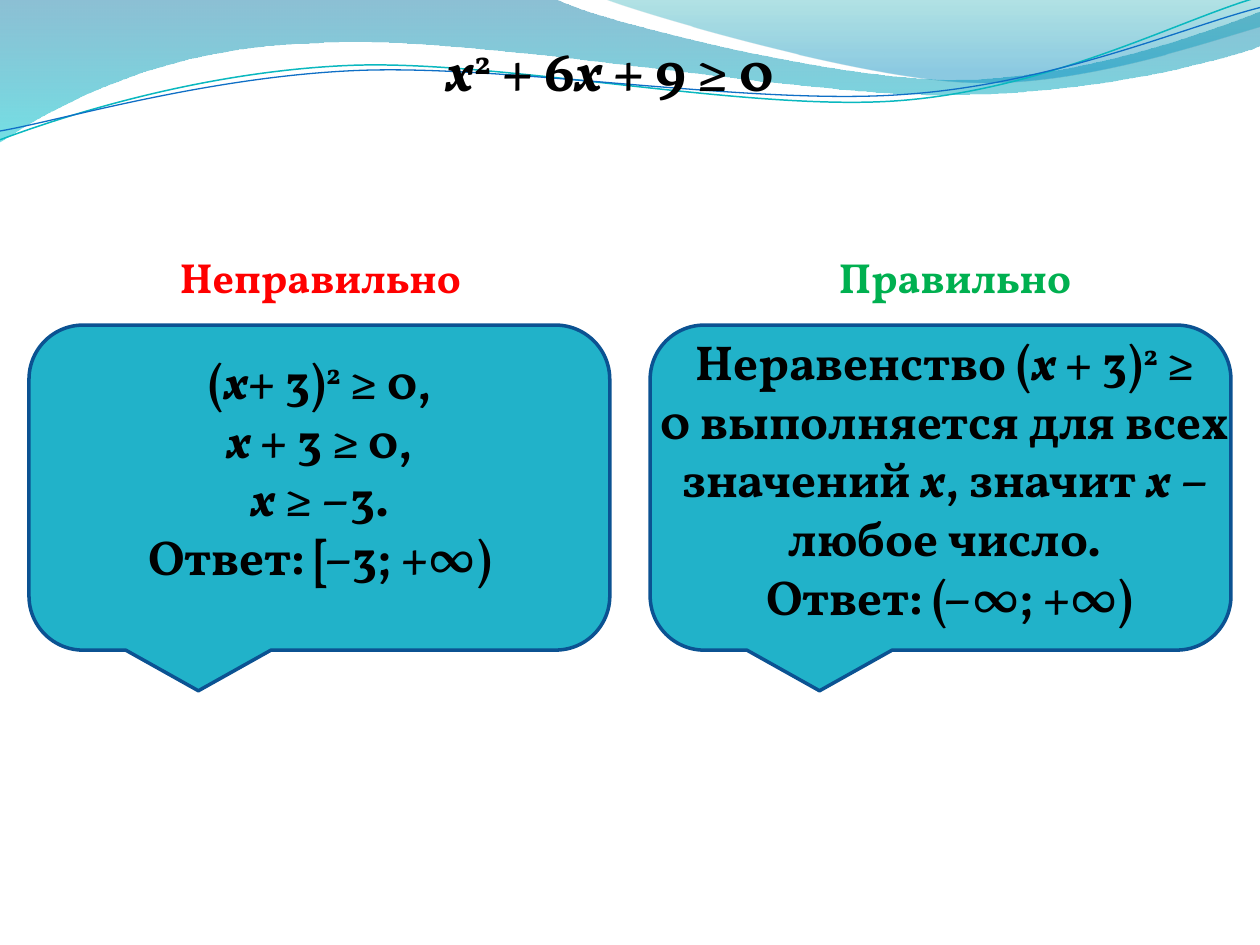
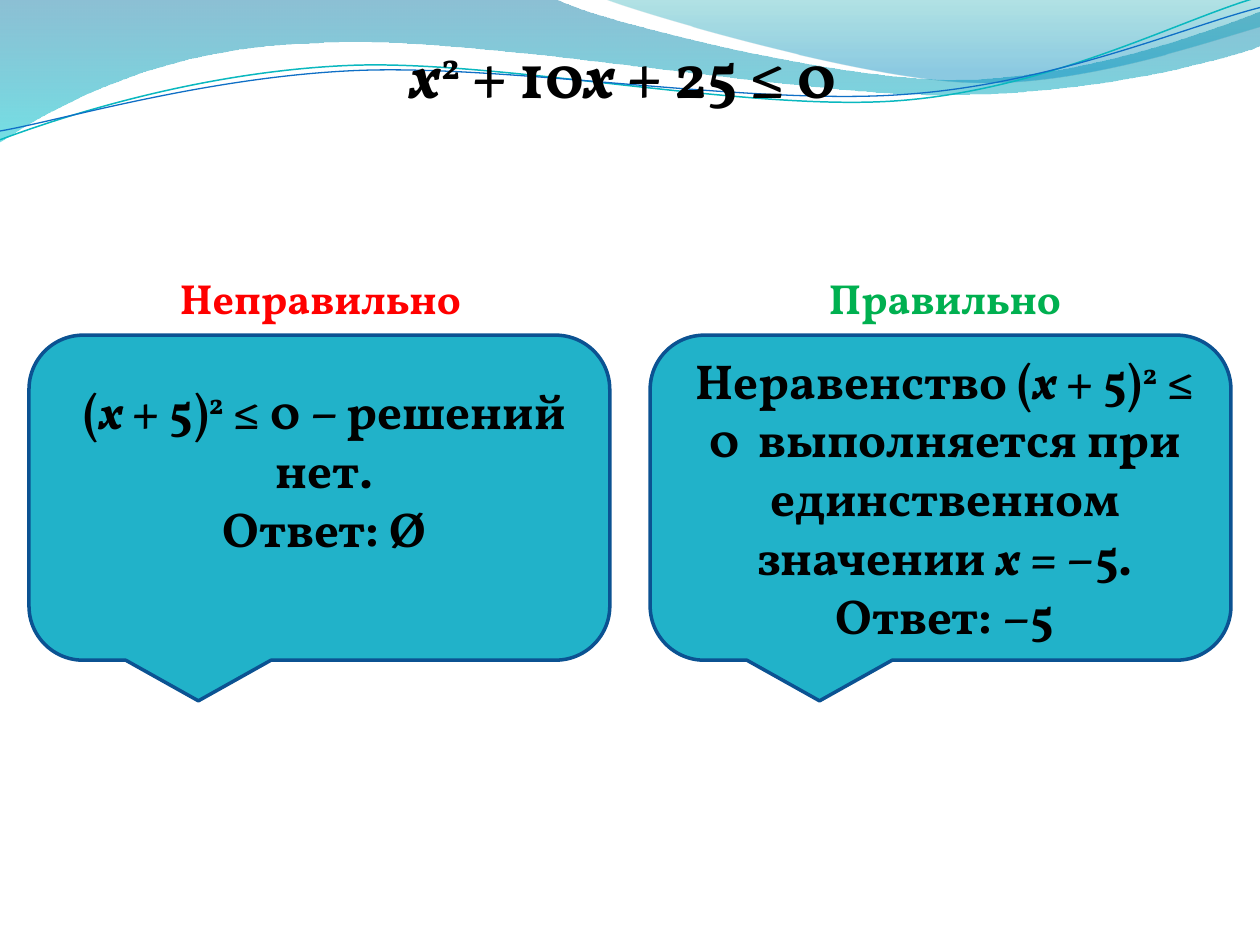
from pptx import Presentation
from pptx.dml.color import RGBColor
from pptx.enum.shapes import MSO_SHAPE
from pptx.enum.text import MSO_ANCHOR, MSO_AUTO_SIZE, PP_ALIGN
from pptx.oxml.ns import qn
from pptx.util import Inches, Pt
from lxml import etree

FONT = "Vollkorn"
HARD_SPACE = chr(160)
BLACK = RGBColor(0x00, 0x00, 0x00)
RED = RGBColor(0xFF, 0x00, 0x00)
GREEN = RGBColor(0x00, 0xB0, 0x50)
CALLOUT_FILL = RGBColor(0x21, 0xB2, 0xC9)
CALLOUT_LINE = RGBColor(0x0B, 0x52, 0x92)
DEEP_BLUE = RGBColor(0x00, 0x74, 0xA1)
AQUA = RGBColor(0x00, 0xC6, 0xCF)
TEAL = RGBColor(0x00, 0xA1, 0xA9)
SKY = RGBColor(0x00, 0x8B, 0xBF)
TEAL_LINE = RGBColor(0x0A, 0xB8, 0xBF)
BLUE_LINE = RGBColor(0x0F, 0x6F, 0xC6)


def write_text(box, paragraphs, size=28, color=BLACK, align=PP_ALIGN.LEFT, wrap=True):
    """Spans are split by |; a leading _ is italic, ^ superscript; ~ is a hard space."""
    frame = box.text_frame
    frame.word_wrap = wrap
    frame.auto_size = MSO_AUTO_SIZE.SHAPE_TO_FIT_TEXT
    frame.vertical_anchor = MSO_ANCHOR.TOP
    for index, text in enumerate(paragraphs):
        para = frame.add_paragraph() if index else frame.paragraphs[0]
        para.alignment = align
        for part in text.split("|"):
            span = para.add_run()
            span.text = part.lstrip("_^").replace("~", HARD_SPACE)
            font = span.font
            font.name, font.size, font.bold = FONT, Pt(size), True
            font.italic = part.startswith("_")
            font.color.rgb = color
            if part.startswith("^"):
                span._r.get_or_add_rPr().set("baseline", "30000")


def draw_wave(page, start, segments, close):
    """Segments hold one end point, or two control points and an end point."""
    points = [(Inches(segment[i]), Inches(segment[i + 1]))
              for segment in segments for i in range(0, len(segment), 2)]
    builder = page.shapes.build_freeform(Inches(start[0]), Inches(start[1]))
    builder.add_line_segments(points, close=close)
    wave = builder.convert_to_shape()
    wave.shadow.inherit = False
    # Turn each run of three points that belongs to a curve into one Bézier step
    steps = iter(list(wave.element.iter(qn("a:lnTo"))))
    for segment in segments:
        first = next(steps)
        if len(segment) == 6:
            first.tag = qn("a:cubicBezTo")
            for extra in (next(steps), next(steps)):
                first.append(extra[0])
                extra.getparent().remove(extra)
    return wave


# Outlines: start and segments, then gradient stops (position, colour, opacity)
BANDS = [
    ((0, 0),
     [(4.4, -0.01), (4.76, 0.17, 6.64, 0.63, 7.58, 0.63),
      (8.53, 0.63, 9.58, 0.26, 10, 0.09), (10.01, 0.36),
      (9.83, 0.44, 8.7, 0.76, 7.46, 0.75), (6.22, 0.75, 3.82, 0.28, 2.57, 0.34),
      (1.29, 0.36, 0.46, 0.83, -0.01, 1.13), (0, 0)],
     [(0, DEEP_BLUE, 45), (1, AQUA, 55)]),
    ((4.79, -0.01),
     [(5.09, 0.11, 6.82, 0.62, 7.69, 0.65), (8.56, 0.69, 9.61, 0.32, 10, 0.21),
      (10, 0), (4.79, -0.01)],
     [(0, TEAL, 30), (0.8, SKY, 45)]),
]
STROKES = [
    ((0, 1.11),
     [(0.48, 0.93, 1.58, 0.57, 2.77, 0.52), (3.95, 0.47, 5.93, 0.89, 7.13, 0.8),
      (8.33, 0.71, 9.38, 0.15, 9.98, -0.02)],
     TEAL_LINE, 0.85),
    ((0, 1.04),
     [(0.47, 0.96, 1.64, 0.61, 2.83, 0.56), (4.03, 0.51, 5.97, 0.84, 7.17, 0.75),
      (8.36, 0.67, 9.41, 0.21, 10, 0.06)],
     BLUE_LINE, 0.75),
]

# Slide content; boxes are (left, top, width, height)
TASKS = [
    {
        "title": "_х|^2|~+ 6|_x~|+ 9 ≥ 0", "title_size": 32,
        "title_box": (3.44, 0.23, 2.96, 0.64),
        "label_top": 1.95, "right_label_left": 6.56, "callout_top": 2.58,
        "answers": [
            ((0.39, 2.73, 4.3, 1.99),
             ["(|_х|+ 3)|^2|~≥ 0,", "_х~|+ 3 ≥ 0,", "_х|~≥ –3.", "Ответ:~[–3; +∞)"]),
            ((5, 2.58, 5, 2.46),
             ["Неравенство~(|_х~|+ 3)|^2|~≥ 0~выполняется для всех значений~"
              "|_х|, значит~|_х|~– любое число.",
              "~Ответ:~(–∞; +∞)"]),
        ],
    },
    {
        "title": "~|_х|^2|~+ 10|_x~|+ 25 ≤ 0", "title_size": 36,
        "title_box": (3.05, 0.23, 3.83, 0.71),
        "label_top": 2.11, "right_label_left": 6.48, "callout_top": 2.66,
        "answers": [
            ((0.23, 2.97, 4.69, 1.51),
             ["(|_х~|+ 5)|^2|~≤ 0~– решений нет.", "Ответ:~Ø"]),
            ((5, 2.73, 5, 2.46),
             ["Неравенство~(|_х~|+ 5)|^2|~≤ 0~~выполняется при единственном значении~"
              "|_х|~= –5.",
              "Ответ:~–5"]),
        ],
    },
]

deck = Presentation()
deck.slide_width, deck.slide_height = Inches(10), Inches(7.5)
layout = deck.slide_layouts[5]
for placeholder in list(layout.placeholders):
    if placeholder.placeholder_format.idx != 0:
        placeholder.element.getparent().remove(placeholder.element)
pages = [deck.slides.add_slide(layout) for task in TASKS]

# Shared waves: drawn once, then moved to the layout behind its title
waves = []
for start, segments, stops in BANDS:
    band = draw_wave(pages[0], start, segments, close=True)
    band.line.fill.background()
    band.fill.gradient()
    band.fill.gradient_angle = 270
    for stop, (position, color, opacity) in zip(band.fill.gradient_stops, stops):
        stop.position = position
        stop.color.rgb = color
    for tag, (position, color, opacity) in zip(band.element.iter(qn("a:srgbClr")), stops):
        etree.SubElement(tag, qn("a:alpha")).set("val", str(opacity * 1000))
    waves.append(band)
for start, segments, color, width in STROKES:
    stroke = draw_wave(pages[0], start, segments, close=False)
    stroke.fill.background()
    stroke.line.color.rgb = color
    stroke.line.width = Pt(width)
    waves.append(stroke)
for index, wave in enumerate(waves):
    layout.shapes.element.insert(2 + index, wave.element)

for page, task in zip(pages, TASKS):
    # Callouts
    for left in (0.23, 5.16):
        callout = page.shapes.add_shape(
            MSO_SHAPE.ROUNDED_RECTANGULAR_CALLOUT,
            Inches(left), Inches(task["callout_top"]), Inches(4.61), Inches(2.58))
        callout.shadow.inherit = False
        callout.fill.solid()
        callout.fill.fore_color.rgb = CALLOUT_FILL
        callout.line.color.rgb = CALLOUT_LINE
        callout.line.width = Pt(2)

    # Inequality as the title
    title = page.shapes.title
    title.left, title.top, title.width, title.height = map(Inches, task["title_box"])
    write_text(title, [task["title"]], size=task["title_size"], wrap=False)

    # Solutions
    for place, lines in task["answers"]:
        box = page.shapes.add_textbox(*map(Inches, place))
        write_text(box, lines, align=PP_ALIGN.CENTER)

    # Verdict labels
    for verdict, color, left, width in (
        ("Неправильно", RED, 1.33, 2.47),
        ("Правильно", GREEN, task["right_label_left"], 2.07),
    ):
        box = page.shapes.add_textbox(
            Inches(left), Inches(task["label_top"]), Inches(width), Inches(0.5))
        write_text(box, [verdict], size=24, color=color, wrap=False)

deck.save("out.pptx")
